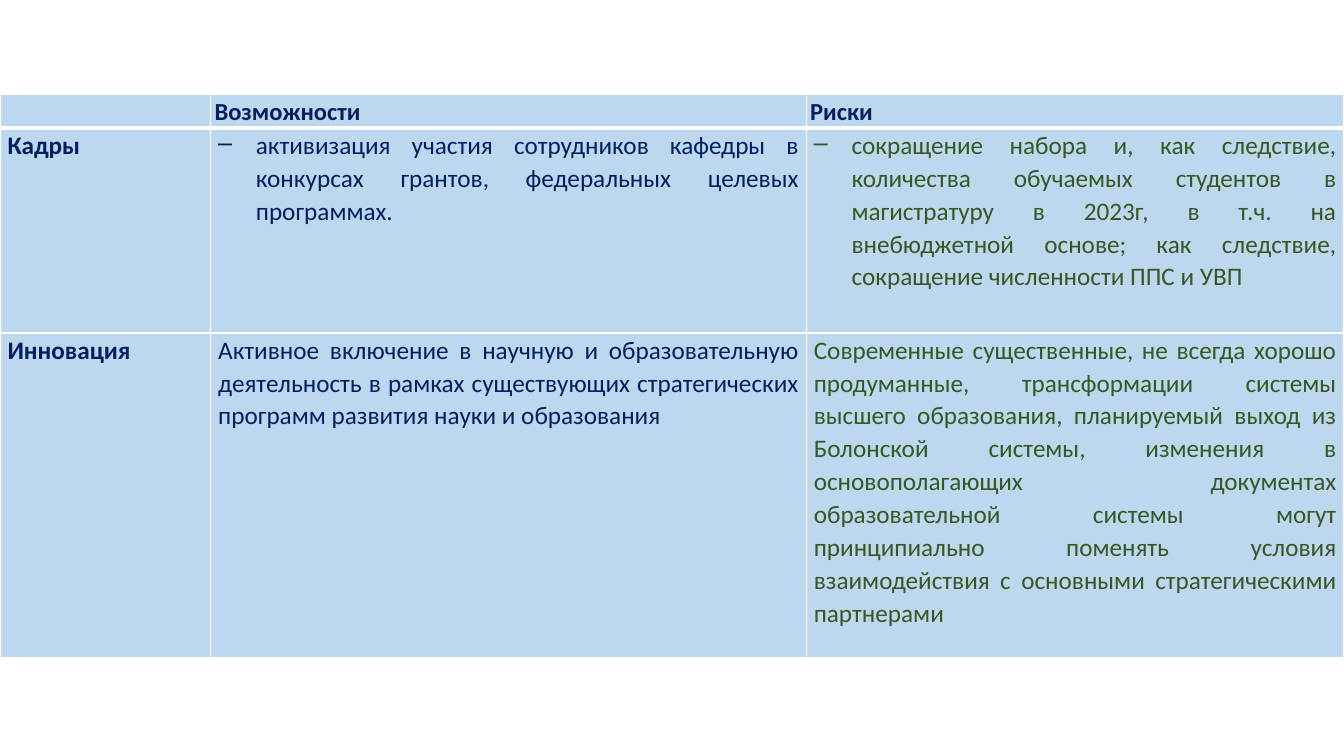
import pptx
import pptx.dml.color
import pptx.enum.text
import pptx.oxml
import pptx.oxml.ns
import pptx.util
from pptx.util import Cm

NAVY, GREEN, PALE_BLUE, WHITE = "002060", "385723", "BDD7EE", "FFFFFF"
COLUMN_WIDTHS = (5.31, 15.01, 13.55)
ROW_HEIGHTS = (0.84, 5.16, 8.18)
DASH = "– "

# A leading dash marks a bulleted cell
CONTENT = (
    ("", "Возможности ", "Риски "),
    (
        "Кадры ",
        DASH + "активизация участия сотрудников кафедры в конкурсах грантов, "
        "федеральных целевых программах.",
        DASH + "сокращение набора и, как следствие, количества обучаемых студентов "
        "в магистратуру в 2023г, в т.ч. на внебюджетной основе; как следствие, "
        "сокращение численности ППС и УВП",
    ),
    (
        "Инновация",
        "Активное включение в научную и образовательную деятельность в рамках "
        "существующих стратегических программ развития науки и образования ",
        "Современные существенные, не всегда хорошо продуманные, трансформации "
        "системы высшего образования, планируемый выход из Болонской системы, "
        "изменения в основополагающих документах образовательной системы могут "
        "принципиально поменять условия взаимодействия с основными "
        "стратегическими партнерами",
    ),
)


def color(hex_value):
    return pptx.dml.color.RGBColor.from_string(hex_value)


def add_borders(cell, top, bottom):
    """Draw white cell borders; widths are in points."""
    properties = cell._tc.get_or_add_tcPr()
    for side, width in (("L", 1), ("R", 1), ("T", top), ("B", bottom)):
        properties.append(pptx.oxml.parse_xml(
            f'<a:ln{side} {pptx.oxml.ns.nsdecls("a")} w="{pptx.util.Pt(width)}">'
            f'<a:solidFill><a:srgbClr val="{WHITE}"/></a:solidFill></a:ln{side}>'))


def add_dash(paragraph):
    properties = paragraph._p.get_or_add_pPr()
    properties.set("marL", str(Cm(0.95)))
    properties.set("indent", str(-Cm(0.95)))
    properties.append(pptx.oxml.parse_xml(
        f'<a:buChar {pptx.oxml.ns.nsdecls("a")} char="–"/>'))


def write_cell(cell, text, size, bold, text_color):
    paragraph = cell.text_frame.paragraphs[0]
    paragraph.text = text.removeprefix(DASH)
    paragraph.alignment = pptx.enum.text.PP_ALIGN.JUSTIFY
    paragraph.line_spacing = 1.07
    paragraph.space_after = pptx.util.Pt(8)
    if text.startswith(DASH):
        add_dash(paragraph)
    font = paragraph.font
    font.name = "Calibri"
    font.size = pptx.util.Pt(size)
    font.bold = bold
    font.color.rgb = color(text_color)


def add_opportunities_and_risks(slide):
    table = slide.shapes.add_table(
        len(ROW_HEIGHTS), len(COLUMN_WIDTHS), Cm(0), Cm(2.39),
        Cm(sum(COLUMN_WIDTHS)), Cm(sum(ROW_HEIGHTS))).table
    table.first_row = table.horz_banding = False
    for column, width in zip(table.columns, COLUMN_WIDTHS):
        column.width = Cm(width)
    for row, height in zip(table.rows, ROW_HEIGHTS):
        row.height = Cm(height)

    for r, texts in enumerate(CONTENT):
        is_header = r == 0
        for c, text in enumerate(texts):
            cell = table.cell(r, c)
            cell.margin_left = cell.margin_right = Cm(0.1 if is_header else 0.19)
            cell.margin_top = cell.margin_bottom = 0
            # The thick line lies between the header and the first row
            add_borders(cell, 3 if r == 1 else 1, 3 if is_header else 1)
            cell.fill.solid()
            cell.fill.fore_color.rgb = color(PALE_BLUE)
            is_risk = c == 2 and not is_header
            write_cell(cell, text, 17.5 if is_header else 18,
                       is_header or c == 0, GREEN if is_risk else NAVY)


def main():
    presentation = pptx.Presentation()
    presentation.slide_width = Cm(33.87)
    presentation.slide_height = Cm(19.05)
    # The slide has no title, so the blank layout fits
    slide = presentation.slides.add_slide(presentation.slide_layouts[6])
    add_opportunities_and_risks(slide)
    presentation.save("out.pptx")


if __name__ == "__main__":
    main()
